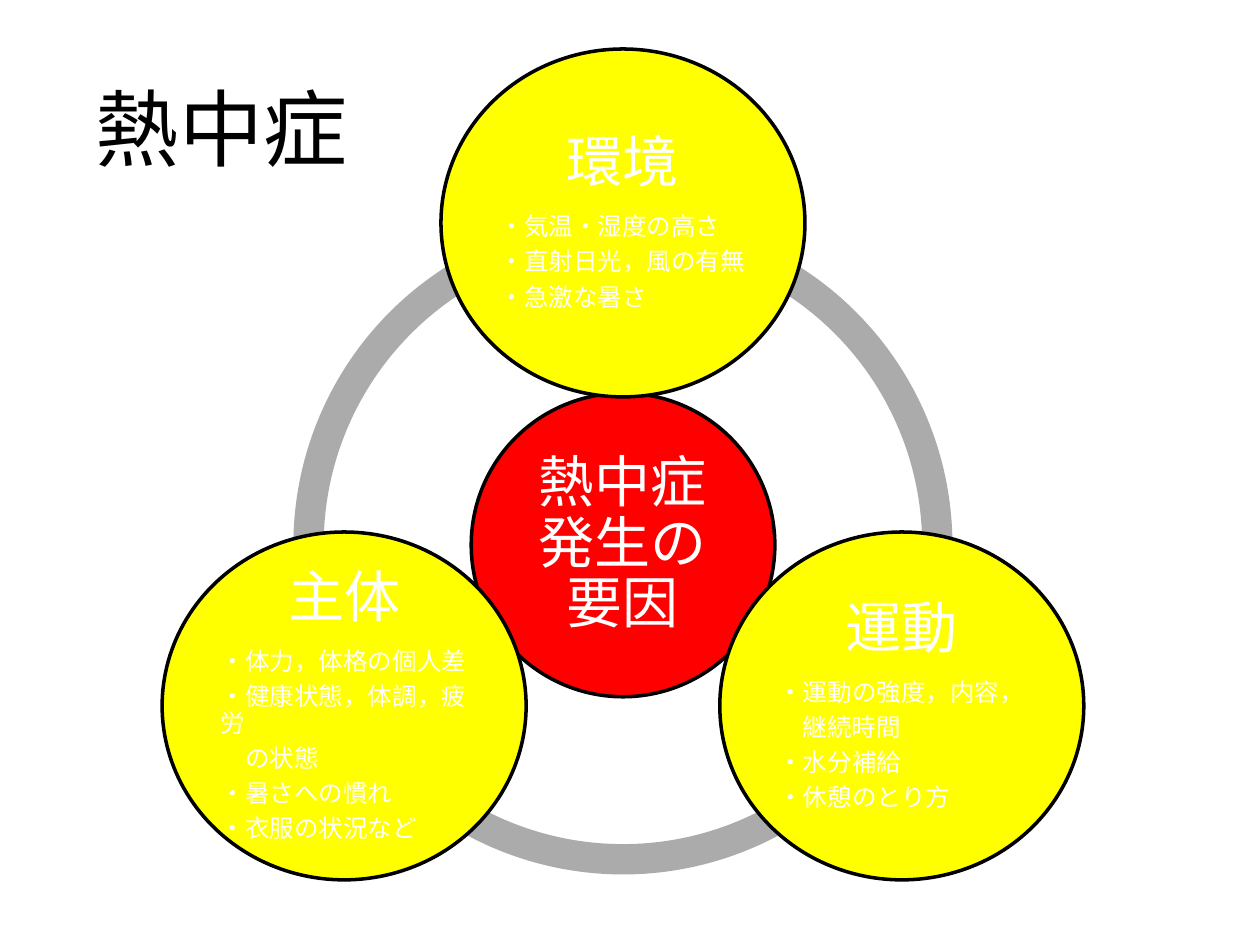
from dataclasses import dataclass
from math import cos, radians, sin, sqrt

from pptx import Presentation
from pptx.dml import color
from pptx.enum import shapes, text
from pptx.util import Pt


@dataclass(frozen=True)
class Theme:
    """Colours, fonts and type sizes of the slide."""
    ring: str = "ABABAB"
    hub: str = "FF0000"
    factor: str = "FFFF00"
    outline: str = "000000"
    title: str = "000000"
    label: str = "FFFFFF"
    body_font: str = "Calibri"
    heading_font: str = "Arial"
    title_size: int = 48
    heading_size: int = 32
    detail_size: int = 14


THEME = Theme()
CENTER_X, CENTER_Y = 356, 311.4
RING_SIZE = 376.6
HUB_SIZE = 173.5
FACTOR_WIDTH, FACTOR_HEIGHT = 208, 198.8
ORBIT = 184
ARCS = [(90, 162), (18, 90), (162, 18)]
FACTORS = [
    (-90, "環境", THEME.heading_font,
     ["・気温・湿度の高さ", "・直射日光，風の有無", "・急激な暑さ"]),
    (30, "運動", THEME.body_font,
     ["・運動の強度，内容，", "継続時間", "・水分補給", "・休憩のとり方"]),
    (150, "主体", THEME.body_font,
     ["・体力，体格の個人差", "・健康状態，体調，疲労", "の状態",
      "・暑さへの慣れ", "・衣服の状況など"]),
]


def centered(x, y, width, height):
    """Return the left, top, width and height of a box around a center."""
    return Pt(x - width / 2), Pt(y - height / 2), Pt(width), Pt(height)


def paint(shape, fill):
    """Give a shape a solid fill and no shadow."""
    shape.shadow.inherit = False
    shape.fill.solid()
    shape.fill.fore_color.rgb = color.RGBColor.from_string(fill)


def format_runs(paragraph, size, font, fill):
    """Set the type of every run in a paragraph."""
    for run in paragraph.runs:
        run.font.size = Pt(size)
        run.font.name = font
        run.font.color.rgb = color.RGBColor.from_string(fill)


def add_arc(group, start, end):
    """Add one section of the ring."""
    shape = group.shapes.add_shape(
        shapes.MSO_SHAPE.BLOCK_ARC,
        *centered(CENTER_X, CENTER_Y, RING_SIZE, RING_SIZE))
    for index, value in enumerate((start, end, 0.046)):
        shape.adjustments[index] = value
    paint(shape, THEME.ring)
    shape.line.fill.background()


def add_circle(group, x, y, width, height, fill, heading, heading_font,
               details=(), detail_font=None):
    """Add an outlined ellipse with its heading and detail lines."""
    shape = group.shapes.add_shape(
        shapes.MSO_SHAPE.OVAL, *centered(x, y, width, height))
    paint(shape, fill)
    shape.line.color.rgb = color.RGBColor.from_string(THEME.outline)
    shape.line.width = Pt(2)

    box = group.shapes.add_textbox(
        *centered(x, y, width / sqrt(2), height / sqrt(2)))
    frame = box.text_frame
    frame.word_wrap = True
    frame.vertical_anchor = text.MSO_ANCHOR.MIDDLE
    frame.margin_left = frame.margin_right = Pt(3)
    frame.margin_top = frame.margin_bottom = Pt(3)
    frame.text = "\n".join([heading, *details])
    for index, paragraph in enumerate(frame.paragraphs):
        is_heading = index == 0
        size = THEME.heading_size if is_heading else THEME.detail_size
        paragraph.alignment = (text.PP_ALIGN.CENTER if is_heading
                               else text.PP_ALIGN.LEFT)
        paragraph.line_spacing = 0.9
        paragraph.space_after = Pt(0.35 * size)
        if not is_heading and not paragraph.text.startswith("・"):
            properties = paragraph._p.get_or_add_pPr()
            properties.set("marL", str(Pt(THEME.detail_size)))
        format_runs(paragraph, size,
                    heading_font if is_heading else detail_font, THEME.label)


def add_title(slide):
    """Add the slide title."""
    box = slide.shapes.add_textbox(Pt(47.5), Pt(40.3), Pt(180), Pt(65.5))
    box.text_frame.word_wrap = True
    box.text_frame.auto_size = text.MSO_AUTO_SIZE.SHAPE_TO_FIT_TEXT
    box.text_frame.text = "熱中症"
    format_runs(box.text_frame.paragraphs[0], THEME.title_size,
                THEME.body_font, THEME.title)


def main():
    """Build and save the slide."""
    presentation = Presentation()
    presentation.slide_width, presentation.slide_height = Pt(720), Pt(540)
    slide = presentation.slides.add_slide(presentation.slide_layouts[6])
    group = slide.shapes.add_group_shape()
    for start, end in ARCS:
        add_arc(group, start, end)
    add_circle(group, CENTER_X, CENTER_Y, HUB_SIZE, HUB_SIZE, THEME.hub,
               "熱中症発生の要因", THEME.body_font)
    for angle, heading, detail_font, details in FACTORS:
        x = CENTER_X + ORBIT * cos(radians(angle))
        y = CENTER_Y + ORBIT * sin(radians(angle))
        add_circle(group, x, y, FACTOR_WIDTH, FACTOR_HEIGHT, THEME.factor,
                   heading, THEME.heading_font, details, detail_font)
    add_title(slide)
    presentation.save("out.pptx")


if __name__ == "__main__":
    main()
